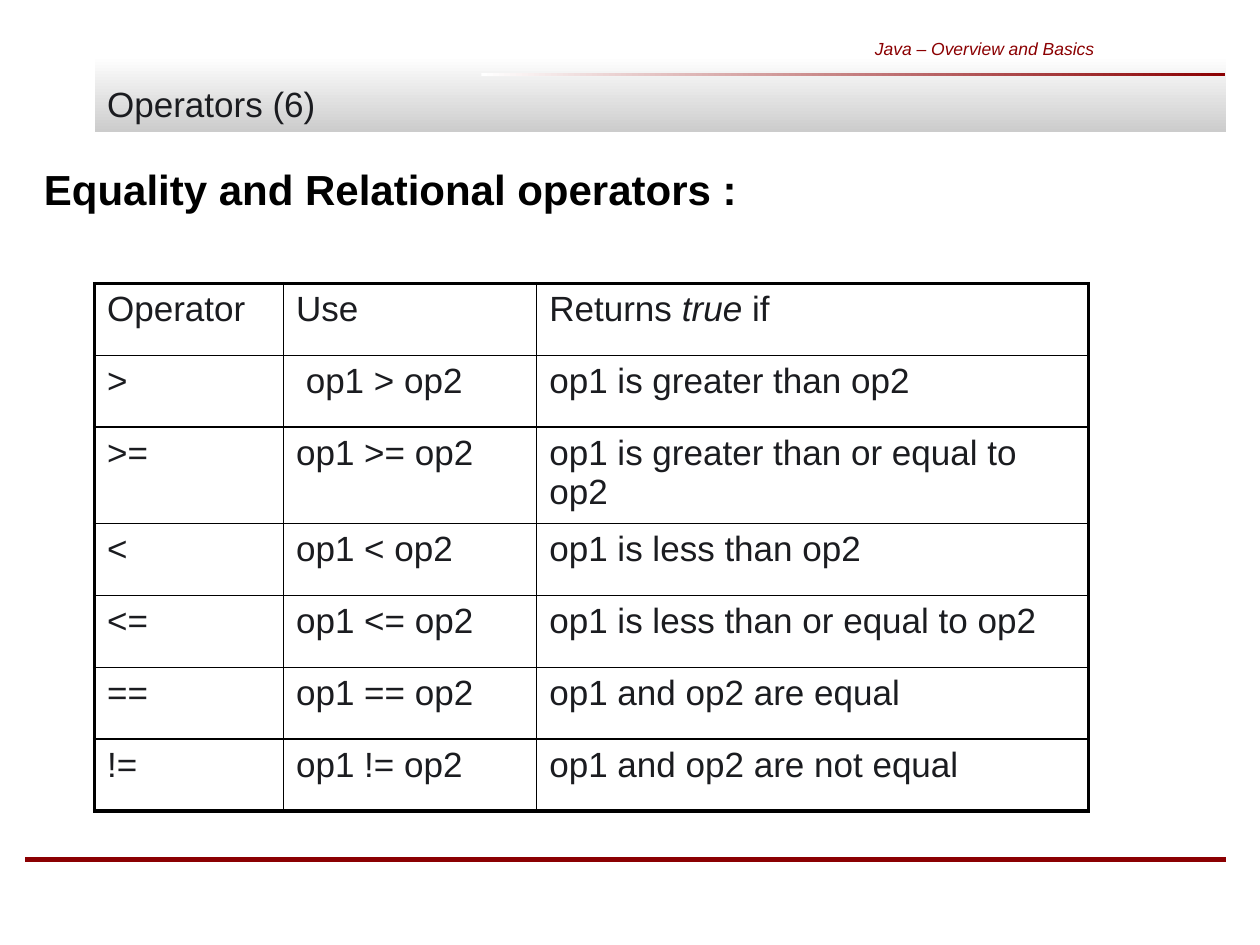
from lxml.etree import SubElement
from pptx import Presentation
from pptx.dml.color import RGBColor
from pptx.enum.shapes import MSO_CONNECTOR, MSO_SHAPE
from pptx.enum.text import MSO_ANCHOR, MSO_AUTO_SIZE, PP_ALIGN
from pptx.oxml.ns import qn
from pptx.util import Inches, Pt

COLORS = {"red": "8B0002", "gray": "CCCCCC", "white": "FFFFFF",
          "ink": "1B1C20", "black": "000000"}
FORMATS = {
    "header": {"size": Pt(10), "italic": True, "color": "red"},
    "title": {"size": Pt(20), "color": "ink"},
    "heading": {"size": Pt(24), "bold": True, "color": "black"},
    "cell": {"size": Pt(20), "color": "ink"},
    "emphasis": {"size": Pt(20), "italic": True, "color": "ink"},
}
COLUMN_WIDTHS = (1.5, 2.01, 4.38)
ROW_HEIGHT = 0.57
OPERATORS = [
    (">", " op1 > op2", "op1 is greater than op2"),
    (">=", "op1 >= op2", "op1 is greater than or equal to op2"),
    ("<", "op1 < op2", "op1 is less than op2"),
    ("<=", "op1 <= op2", "op1 is less than or equal to op2"),
    ("==", "op1 == op2", "op1 and op2 are equal"),
    ("!=", "op1 != op2", "op1 and op2 are not equal"),
]


def color(name):
    """Return the named colour."""
    return RGBColor.from_string(COLORS[name])


def add_run(paragraph, text, style):
    """Add text to a paragraph in one of the named formats."""
    run = paragraph.add_run()
    run.text = text
    run.font.name = "Arial"
    for name, value in FORMATS[style].items():
        if name == "color":
            run.font.color.rgb = color(value)
        else:
            setattr(run.font, name, value)
    return run


def place(shape, box):
    """Move a shape to a box of left, top, width and height in inches."""
    for name, value in zip(("left", "top", "width", "height"), box):
        setattr(shape, name, Inches(value))


def add_gradient_bar(slide, box, end_color, angle):
    """Add a bar that fades from white to a colour."""
    bar = slide.shapes.add_shape(MSO_SHAPE.RECTANGLE, *map(Inches, box))
    bar.shadow.inherit = False
    bar.line.fill.background()
    bar.fill.gradient()
    bar.fill.gradient_angle = angle
    for stop, name in zip(bar.fill.gradient_stops, ("white", end_color)):
        stop.color.rgb = color(name)


def add_footer_line(slide, left, right, top):
    """Add the red rule at the foot of the slide."""
    line = slide.shapes.add_connector(
        MSO_CONNECTOR.STRAIGHT, Inches(left), Inches(top), Inches(right), Inches(top))
    line.line.color.rgb = color("red")
    line.line.width = Pt(3)
    SubElement(line.element.spPr, qn("a:effectLst"))


def add_text(slide, box, text, style, alignment, anchor):
    """Add a wrapping text box with one paragraph."""
    frame = slide.shapes.add_textbox(*map(Inches, box)).text_frame
    frame.word_wrap = True
    frame.vertical_anchor = anchor
    paragraph = frame.paragraphs[0]
    paragraph.alignment = alignment
    add_run(paragraph, text, style)


def fill_title(slide, box, text):
    """Place the title in front of its band, with a light text shadow."""
    title = slide.shapes.title
    place(title, box)
    title.element.getparent().append(title.element)
    frame = title.text_frame
    frame.word_wrap = True
    frame.auto_size = MSO_AUTO_SIZE.NONE
    frame.vertical_anchor = MSO_ANCHOR.BOTTOM
    paragraph = frame.paragraphs[0]
    paragraph.alignment = PP_ALIGN.LEFT
    run = add_run(paragraph, text, "title")
    effects = run.font.fill._xPr.makeelement(qn("a:effectLst"), {})
    run.font.fill._xPr.find(qn("a:solidFill")).addnext(effects)
    shadow = SubElement(effects, qn("a:outerShdw"), dist="25400", dir="2700000")
    SubElement(shadow, qn("a:srgbClr"), val=COLORS["white"])


def set_borders(cell, widths):
    """Draw the left, right, top and bottom borders of a cell."""
    properties = cell._tc.get_or_add_tcPr()
    for index, (side, width) in enumerate(zip("LRTB", widths)):
        line = properties.makeelement(qn(f"a:ln{side}"), {"w": str(Pt(width))})
        properties.insert(index, line)
        fill = SubElement(line, qn("a:solidFill"))
        SubElement(fill, qn("a:srgbClr"), val=COLORS["black"])


def add_operator_table(slide, left, top):
    """Add the operator table with a heavy outer frame."""
    header = ("Operator", "Use", (("Returns ", "cell"), ("true", "emphasis"), (" if", "cell")))
    rows = [header, *OPERATORS]
    last_row, last_column = len(rows) - 1, len(COLUMN_WIDTHS) - 1
    table = slide.shapes.add_table(
        len(rows), len(COLUMN_WIDTHS), Inches(left), Inches(top),
        Inches(sum(COLUMN_WIDTHS)), Inches(ROW_HEIGHT * len(rows))).table
    table.first_row = table.horz_banding = False
    for column, width in zip(table.columns, COLUMN_WIDTHS):
        column.width = Inches(width)
    for row_index, row in enumerate(rows):
        table.rows[row_index].height = Inches(ROW_HEIGHT)
        for column_index, content in enumerate(row):
            cell = table.cell(row_index, column_index)
            cell.fill.background()
            parts = ((content, "cell"),) if isinstance(content, str) else content
            for text, style in parts:
                add_run(cell.text_frame.paragraphs[0], text, style)
            outer = (column_index == 0, column_index == last_column,
                     row_index == 0, row_index == last_row)
            set_borders(cell, [2.25 if edge else 1 for edge in outer])


def build_operator_slide(presentation):
    """Build the slide on equality and relational operators."""
    slide = presentation.slides.add_slide(presentation.slide_layouts[5])
    add_gradient_bar(slide, (0.75, 0.44, 8.98, 0.61), "gray", 270)
    add_footer_line(slide, 0.2, 9.73, 6.82)
    add_gradient_bar(slide, (3.82, 0.58, 5.9, 0.02), "red", 0)
    add_text(slide, (5.87, 0.19, 2.91, 0.39), "Java – Overview and Basics",
             "header", PP_ALIGN.RIGHT, MSO_ANCHOR.MIDDLE)
    fill_title(slide, (0.75, 0.21, 9.25, 0.83), "Operators (6)")
    add_text(slide, (0.25, 1.25, 9.75, 1.59), "Equality and Relational operators :",
             "heading", PP_ALIGN.LEFT, MSO_ANCHOR.TOP)
    add_operator_table(slide, 0.75, 2.25)


def main():
    """Create and save the presentation."""
    presentation = Presentation()
    presentation.slide_width = Inches(10)
    presentation.slide_height = Inches(7.5)
    build_operator_slide(presentation)
    presentation.save("out.pptx")


if __name__ == "__main__":
    main()
